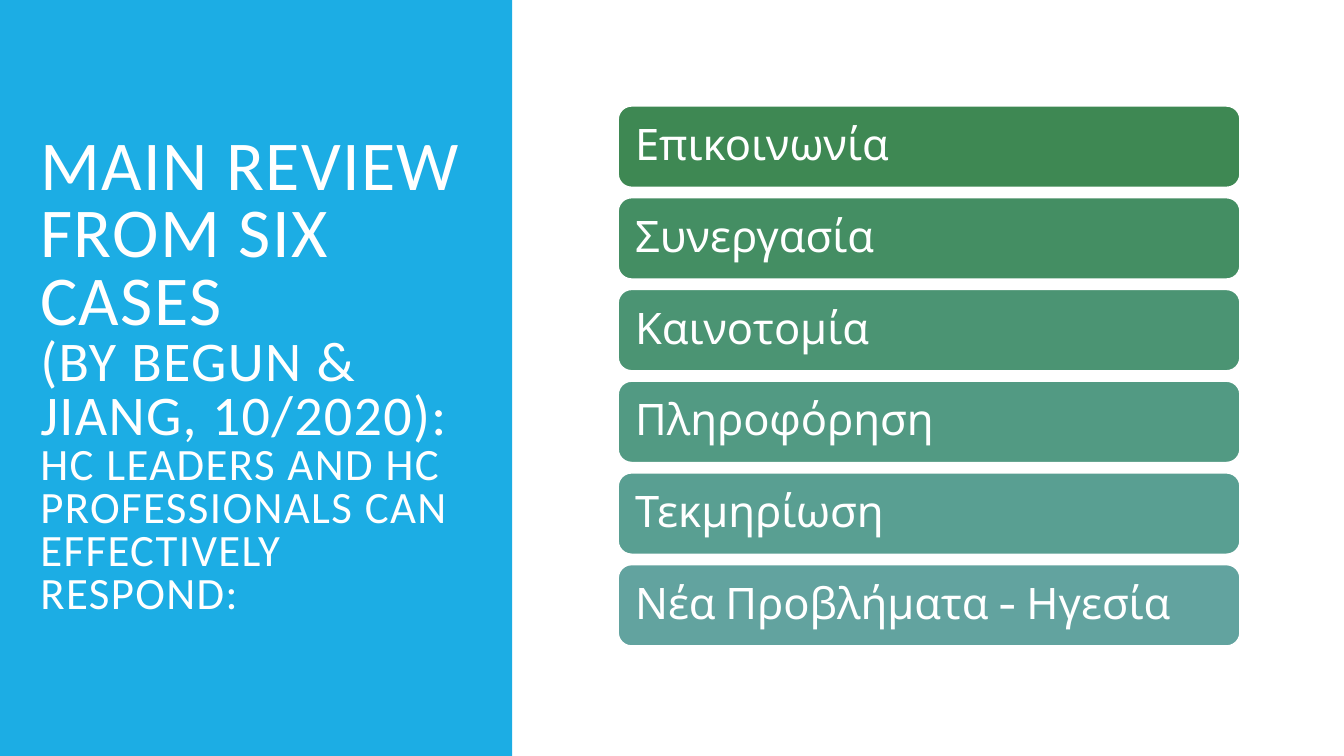
from pptx import Presentation
from pptx.dml.color import RGBColor
from pptx.enum import shapes, text
from pptx.util import Inches, Pt

COLORS = {"panel": "1CADE4", "white": "FFFFFF"}
TITLE_PARTS = [
    ("MAIN REVIEW FROM SIX CASES", 50),
    ("(BY BEGUN & JIANG, 10/2020):", 40),
    ("HC LEADERS AND HC PROFESSIONALS CAN EFFECTIVELY RESPOND:", 32),
]
RESPONSES = [
    ("Επικοινωνία", "3E8853"),
    ("Συνεργασία", "448E63"),
    ("Καινοτομία", "4B9473"),
    ("Πληροφόρηση", "529A83"),
    ("Τεκμηρίωση", "599F92"),
    ("Νέα Προβλήματα - Ηγεσία", "62A39F"),
]


def rgb(value):
    return RGBColor.from_string(value)


def add_box(page, kind, left, top, width, height, fill):
    box = page.shapes.add_shape(
        kind, Inches(left), Inches(top), Inches(width), Inches(height))
    box.shadow.inherit = False
    box.fill.solid()
    box.fill.fore_color.rgb = rgb(fill)
    box.line.fill.background()
    return box


def add_title_panel(page, left, top, width, height):
    add_box(page, shapes.MSO_SHAPE.RECTANGLE, left, top, width, height,
            COLORS["panel"])

    # Title in front of the panel
    title = page.shapes.title
    page.shapes._spTree.append(title._element)
    title.left, title.top = Inches(left + 0.3), Inches(top + 0.7)
    title.width, title.height = Inches(width - 0.55), Inches(height - 1.41)
    frame = title.text_frame
    frame.word_wrap = True
    frame.auto_size = text.MSO_AUTO_SIZE.NONE
    frame.vertical_anchor = text.MSO_ANCHOR.MIDDLE

    para = frame.paragraphs[0]
    para.alignment = text.PP_ALIGN.LEFT
    para.line_spacing = 0.8
    para.font.name = "Calibri"
    para.font.color.rgb = rgb(COLORS["white"])
    for index, (wording, size) in enumerate(TITLE_PARTS):
        if index:
            para.add_line_break()
        span = para.add_run()
        span.text = wording
        span.font.size = Pt(size)
        span._r.get_or_add_rPr().set("spc", "100")  # letter spacing of 1 pt


def add_response_list(page, left, top, width, bar_height, pitch):
    for index, (wording, fill) in enumerate(RESPONSES):
        bar = add_box(page, shapes.MSO_SHAPE.ROUNDED_RECTANGLE,
                      left, top + index * pitch, width, bar_height, fill)
        bar.line.color.rgb = rgb(COLORS["white"])
        bar.line.width = Pt(1.25)

        frame = bar.text_frame
        frame.word_wrap = True
        frame.vertical_anchor = text.MSO_ANCHOR.MIDDLE
        frame.margin_left = frame.margin_right = Inches(0.13)
        frame.margin_top = frame.margin_bottom = Inches(0.13)
        para = frame.paragraphs[0]
        para.text = wording
        para.alignment = text.PP_ALIGN.LEFT
        para.line_spacing = 0.9
        para.font.name = "Cabin"
        para.font.size = Pt(31)
        para.font.color.rgb = rgb(COLORS["white"])


def main():
    deck = Presentation()
    deck.slide_width, deck.slide_height = Inches(13.33), Inches(7.5)
    page = deck.slides.add_slide(deck.slide_layouts.get_by_name("Title Only"))
    add_title_panel(page, 0, 0, 5.08, 7.5)
    add_response_list(page, 6.13, 1.05, 6.17, 0.81, 0.91)
    deck.save("out.pptx")


if __name__ == "__main__":
    main()
